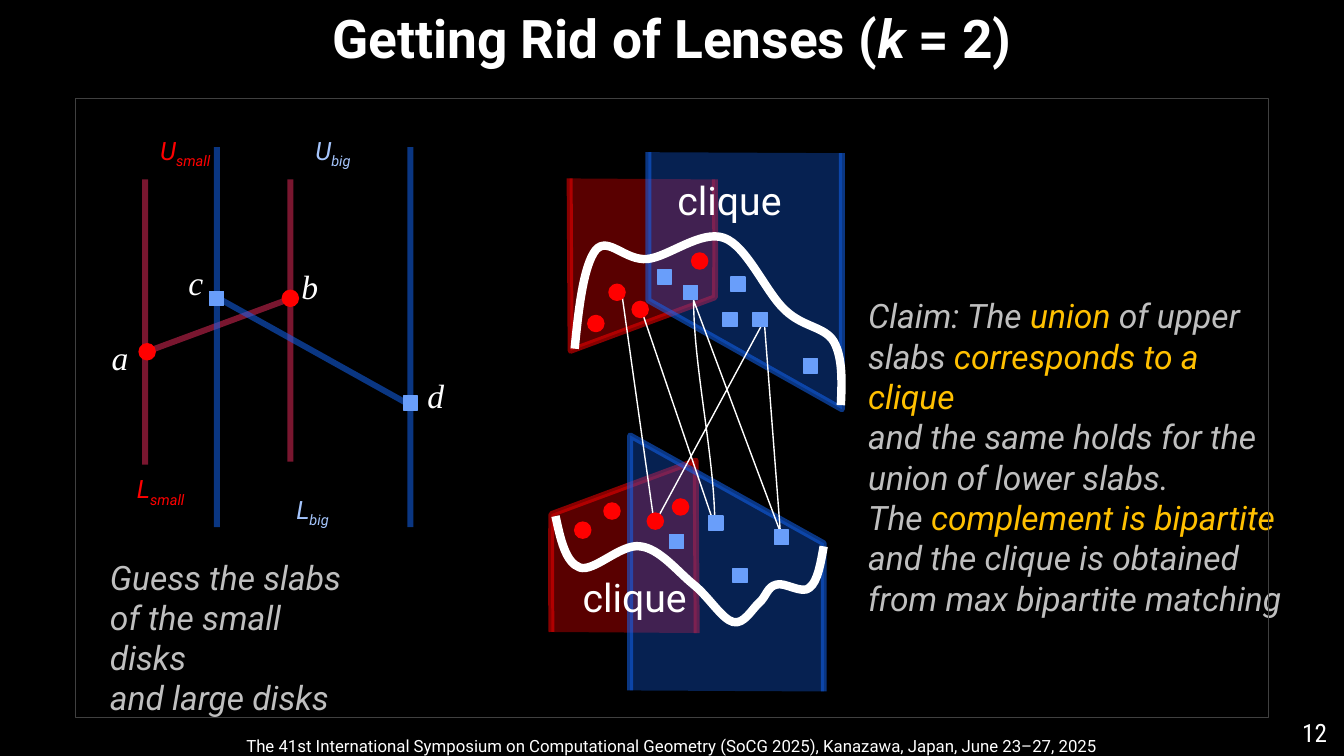
import pptx
import pptx.util
import pptx.dml.color
import pptx.enum.shapes
import pptx.enum.text
import pptx.oxml.ns
import lxml.etree

Inches = pptx.util.Inches
Pt = pptx.util.Pt
qn = pptx.oxml.ns.qn
SHAPES = pptx.enum.shapes.MSO_SHAPE
ALIGN = pptx.enum.text.PP_ALIGN

THEME = {
    "color": {
        "black": "000000", "white": "FFFFFF", "frame": "404040", "grey": "BFBFBF",
        "gold": "FFC000", "red": "FF0000", "crimson": "E62B59", "blue": "1366F7",
        "square": "699EFA", "pale": "A5C5FC",
    },
    "type": {
        "title": {"name": "Roboto", "size": Pt(38), "bold": True},
        "claim": {"name": "Roboto", "size": Pt(24), "italic": True},
        "clique": {"name": "Roboto", "size": Pt(28)},
        "slab": {"name": "Roboto", "size": Pt(18), "italic": True},
        "point": {"name": "Times New Roman", "size": Pt(24), "italic": True},
        "footer": {"name": "Roboto", "size": Pt(12)},
        "number": {"name": "Roboto Condensed", "size": Pt(18)},
    },
    "line": {"footer": 0.5, "thin": 1, "slab": 4.25, "curve": 6},
    "slab_line_alpha": 52,
}

TITLE = [[("Getting Rid of Lenses (", "white"), ("k", "white", {"italic": True}), (" = 2)", "white")]]
GUESS = [[("Guess the slabs", "grey")], [("of the small disks", "grey")], [("and large disks", "grey")]]
CLAIM = [
    [("Claim: The ", "grey"), ("union", "gold"), (" of upper slabs ", "grey"),
     ("corresponds to a clique", "gold")],
    [("and the same holds for the union of lower slabs.", "grey")],
    [("The ", "grey"), ("complement is bipartite ", "gold"), ("and the clique is obtained", "grey")],
    [("from max bipartite matching", "grey")],
]
FOOTER = "The 41st International Symposium on Computational Geometry (SoCG 2025), Kanazawa, Japan, June 23–27, 2025"
PAGE = "12"

FRAME = (0.75, 0.98, 11.83, 6.14)
SEGMENTS = [
    ((1.48, 3.48), (2.86, 2.97), "crimson"),
    ((1.44, 4.61), (1.44, 1.78), "crimson"),
    ((2.88, 4.58), (2.88, 1.78), "crimson"),
    ((2.15, 2.95), (4.07, 4.02), "blue"),
    ((2.15, 5.23), (2.15, 1.46), "blue"),
    ((4.07, 5.23), (4.07, 1.46), "blue"),
]
POINT_LABELS = [("c", 1.77, 2.55, 0.35), ("d", 4.14, 3.67, 0.37), ("a", 1.01, 3.29, 0.37), ("b", 2.89, 2.59, 0.37)]
SLAB_LABELS = [
    ("L", "small", "red", 1.26, 4.65, 6.67), ("L", "big", "pale", 2.84, 4.85, 0.71),
    ("U", "big", "pale", 3.03, 1.29, 0.71), ("U", "small", "red", 1.49, 1.29, 0.71),
]
CLIQUE_LABELS = [(6.55, 1.7), (5.61, 5.64)]

SLABS = [
    ([(5.65, 1.77), (5.66, 3.48), (7.09, 2.95), (7.1, 2.56, 7.09, 1.78, 7.09, 1.78)], "red", 35),
    ([(6.43, 1.51), (6.43, 2.98), (8.35, 4.06), (8.35, 1.52)], "blue", 33),
    ([(6.91, 6.28), (6.9, 4.57), (5.47, 5.1), (5.46, 5.49, 5.47, 6.27, 5.47, 6.27)], "red", 35),
    ([(8.17, 6.86), (8.17, 5.39), (6.25, 4.32), (6.25, 6.85)], "blue", 33),
]
UPPER_CURVE = [
    (5.7, 3.46), (5.74, 3.05, 5.79, 2.63, 5.91, 2.48), (6.03, 2.34, 6.2, 2.59, 6.42, 2.57),
    (6.63, 2.55, 6.95, 2.28, 7.18, 2.36), (7.41, 2.44, 7.6, 2.91, 7.79, 3.08),
    (7.97, 3.25, 8.18, 3.24, 8.27, 3.39), (8.36, 3.55, 8.35, 3.79, 8.34, 4.02),
]
LOWER_CURVE = [
    (5.51, 5.12), (5.56, 5.35, 5.61, 5.58, 5.75, 5.63), (5.89, 5.68, 6.16, 5.39, 6.35, 5.42),
    (6.54, 5.44, 6.72, 5.67, 6.88, 5.8), (7.03, 5.92, 7.16, 6.14, 7.27, 6.17),
    (7.38, 6.2, 7.46, 6.04, 7.53, 5.98), (7.6, 5.92, 7.61, 5.82, 7.7, 5.8),
    (7.78, 5.77, 7.96, 5.9, 8.03, 5.83), (8.11, 5.77, 8.14, 5.59, 8.17, 5.42),
]
BIPARTITE_EDGES = [
    (6.16, 2.86), (6.49, 5.2), (7.58, 3.18), (7.74, 5.28), (6.88, 2.98),
    (6.88, 3.65, 7.09, 4.54, 7.09, 5.22), (6.36, 3.07),
]
MARKERS = [
    (SHAPES.OVAL, 0.16, "red", [
        (2.8, 2.88), (1.38, 3.41), (6.04, 2.82), (5.83, 3.13), (6.86, 2.51), (6.27, 2.99),
        (5.7, 5.18), (6.42, 5.09), (5.99, 4.99), (6.67, 4.95)]),
    (SHAPES.RECTANGLE, 0.14, "square", [
        (2.08, 2.89), (4, 3.93), (7.97, 3.56), (7.47, 3.1), (6.78, 2.83), (7.25, 2.75),
        (7.17, 3.1), (7.68, 5.26), (7.27, 5.64), (7.03, 5.12), (6.64, 5.3), (6.52, 2.68)]),
]


def rgb(color):
    return pptx.dml.color.RGBColor.from_string(THEME["color"][color])


def apply(target, values):
    for key, value in values.items():
        setattr(target, key, value)


def set_alpha(shape, query, percent):
    for color in shape._element.spPr.xpath(query):
        lxml.etree.SubElement(color, qn("a:alpha")).set("val", str(percent * 1000))


def paint(shape, fill=None, line=None, width="thin"):
    shape.shadow.inherit = False
    if fill:
        shape.fill.solid()
        shape.fill.fore_color.rgb = rgb(fill)
    else:
        shape.fill.background()
    shape.line.color.rgb = rgb(line)
    shape.line.width = Pt(THEME["line"][width])
    return shape


def write(shape, paragraphs, style, align=ALIGN.LEFT, wrap=True, spacing=None):
    frame = shape.text_frame
    apply(frame, {"word_wrap": wrap, "vertical_anchor": pptx.enum.text.MSO_ANCHOR.TOP,
                  "auto_size": pptx.enum.text.MSO_AUTO_SIZE.NONE})
    for index, runs in enumerate(paragraphs):
        paragraph = frame.add_paragraph() if index else frame.paragraphs[0]
        apply(paragraph, {"alignment": align, "space_before": Pt(0), "line_spacing": spacing})
        for text, color, *extra in runs:
            run = paragraph.add_run()
            run.text = text
            apply(run.font, {**THEME["type"][style], **(extra[0] if extra else {})})
            run.font.color.rgb = rgb(color)
    return frame


def place(shape, box):
    apply(shape, dict(zip(("left", "top", "width", "height"), map(Inches, box))))
    return shape


def label(box, runs, style, **options):
    return write(slide.shapes.add_textbox(*map(Inches, box)), [runs], style, **options)


def draw(outline, **look):
    anchors = [tuple(map(Inches, piece[-2:])) for piece in outline]
    builder = slide.shapes.build_freeform(*anchors[0])
    builder.add_line_segments(anchors[1:], close=False)
    shape = builder.convert_to_shape()
    for side, piece in zip(shape._element.xpath(".//a:lnTo"), outline[1:]):
        if len(piece) == 6:
            bend = lxml.etree.Element(qn("a:cubicBezTo"))
            for x, y in zip(piece[::2], piece[1::2]):
                point = lxml.etree.SubElement(bend, qn("a:pt"))
                point.set("x", str(Inches(x) - shape.left))
                point.set("y", str(Inches(y) - shape.top))
            side.getparent().replace(side, bend)
    return paint(shape, **look)


deck = pptx.Presentation()
apply(deck, {"slide_width": Inches(13.33), "slide_height": Inches(7.5)})
slide = deck.slides.add_slide(deck.slide_layouts[3])
slide.background.fill.solid()
slide.background.fill.fore_color.rgb = rgb("black")

title, guess, claim = slide.placeholders
paint(place(title, (0, 0.07, 13.33, 0.84)), line="black")
write(title, TITLE, "title", ALIGN.CENTER, spacing=0.9)
for body, box, content in ((guess, (0.99, 5.47, 2.56, 1.31), GUESS),
                           (claim, (8.51, 2.88, 4.35, 2.93), CLAIM)):
    for paragraph in write(place(body, box), content, "claim").paragraphs:
        properties = paragraph._p.get_or_add_pPr()
        properties.set("marL", "0")
        properties.set("indent", "0")
        lxml.etree.SubElement(properties, qn("a:buNone"))

paint(slide.shapes.add_shape(SHAPES.RECTANGLE, *map(Inches, FRAME)), line="frame")
footer = slide.shapes.add_shape(SHAPES.RECTANGLE, *map(Inches, (0, 7.25, 13.33, 0.25)))
write(paint(footer, "black", "black", "footer"), [[(FOOTER, "white")]], "footer", ALIGN.CENTER)
label((10.76, 7.07, 2.5, 0.83), [(PAGE, "white")], "number", align=ALIGN.RIGHT)

for start, end, color in SEGMENTS:
    segment = slide.shapes.add_connector(pptx.enum.shapes.MSO_CONNECTOR.STRAIGHT, *map(Inches, start + end))
    segment.line.color.rgb = rgb(color)
    segment.line.width = Pt(THEME["line"]["slab"])
    set_alpha(segment, "./a:ln//a:srgbClr", THEME["slab_line_alpha"])
    lxml.etree.SubElement(segment._element.spPr, qn("a:effectLst"))

for outline, color, opacity in SLABS:
    slab = draw(outline, fill=color, line=color, width="slab")
    set_alpha(slab, "./a:solidFill/a:srgbClr", opacity)
    set_alpha(slab, "./a:ln//a:srgbClr", THEME["slab_line_alpha"])

for left, top in CLIQUE_LABELS:
    label((left, top, 1.37, 0.57), [("clique", "white")], "clique", align=ALIGN.CENTER)
for curve in (UPPER_CURVE, LOWER_CURVE):
    draw(curve, line="white", width="curve")
draw(BIPARTITE_EDGES, line="white")

for kind, size, color, corners in MARKERS:
    for left, top in corners:
        paint(slide.shapes.add_shape(kind, *map(Inches, (left, top, size, size))), fill=color, line=color)

for name, left, top, width in POINT_LABELS:
    label((left, top, width, 0.5), [(name, "white")], "point", wrap=False)
for name, subscript, color, left, top, width in SLAB_LABELS:
    frame = label((left, top, width, 0.4), [(name, color), (subscript, color)], "slab")
    frame.paragraphs[0].runs[1].font._element.set("baseline", "-25000")

deck.save("out.pptx")
